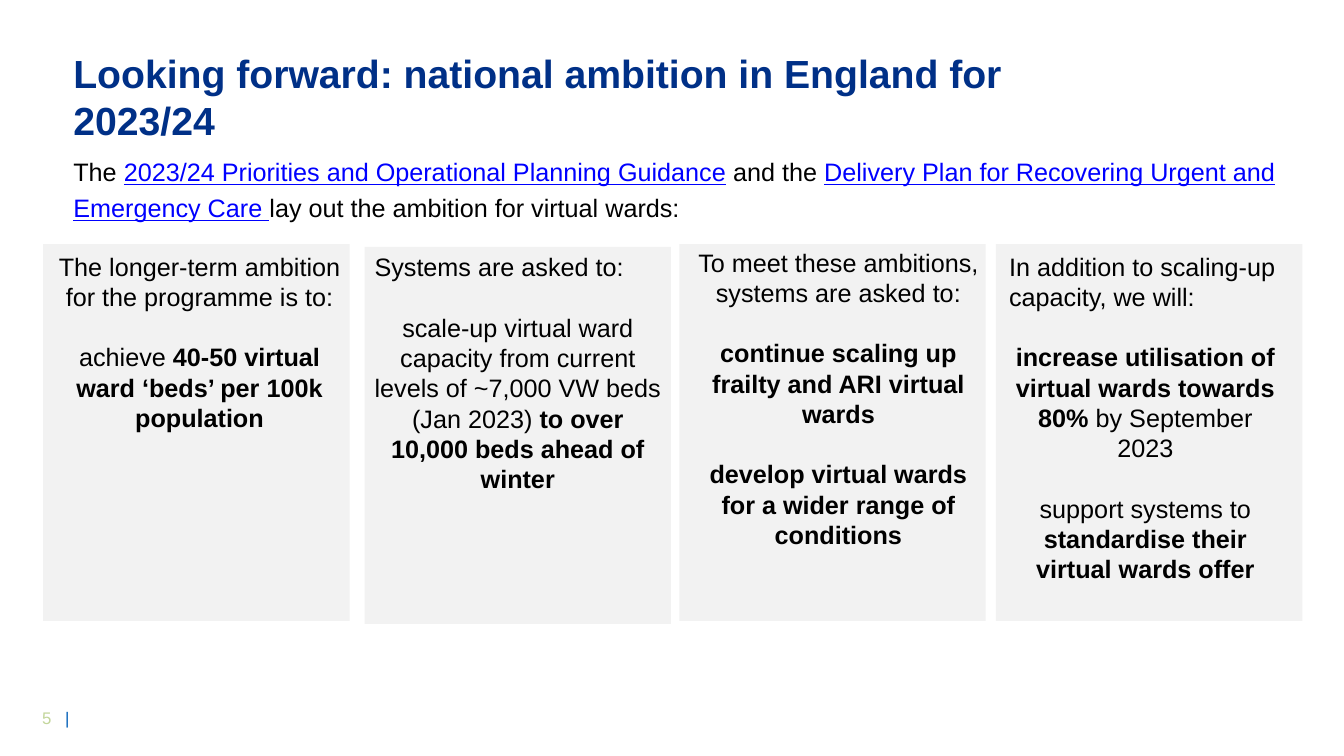
from pptx import Presentation
from pptx.dml.color import RGBColor
from pptx.enum.shapes import MSO_SHAPE as SHAPE
from pptx.enum.text import MSO_ANCHOR as ANCHOR, PP_ALIGN as ALIGN
from pptx.oxml import parse_xml
from pptx.oxml.ns import nsdecls
from pptx.util import Cm, Pt

NAVY = RGBColor(0x00, 0x30, 0x87)
BLUE = RGBColor(0x00, 0x5E, 0xB8)
LINK = RGBColor(0x00, 0x00, 0xFF)
GREEN = RGBColor(0xC3, 0xD6, 0x9B)
GREY = RGBColor(0xF2, 0xF2, 0xF2)
BLACK = RGBColor(0x00, 0x00, 0x00)

FONT = "Arial"
GAP = Pt(21.6)  # one line of body text
CARD_TOP, CARD_W, CARD_H = 6.15, 7.72, 9.5

# Each card: left, drop below the row, text offset (x, y), text width, paragraphs.
# A paragraph is an alignment and its (text, bold) runs.
CARDS = [
    (1.09, 0, (0.08, 0.05), 7.72, [
        (ALIGN.CENTER, [("The longer-term ambition for the programme is to:", False)]),
        (ALIGN.CENTER, [("achieve ", False),
                        ("40-50 virtual ward ‘beds’ per 100k population", True)]),
    ]),
    (9.19, 0.07, (0, 0), 7.72, [
        (ALIGN.LEFT, [("Systems are asked to:", False)]),
        (ALIGN.CENTER, [("scale-up virtual ward capacity from current levels of "
                         "~7,000 VW beds (Jan 2023)", False),
                        (" to over 10,000 beds ahead of winter", True)]),
    ]),
    (17.12, 0, (0.05, -0.05), 7.92, [
        (ALIGN.CENTER, [("To meet these ambitions, systems are asked to:", False)]),
        (ALIGN.CENTER, [("continue scaling up frailty and ARI virtual wards", True)]),
        (ALIGN.CENTER, [("develop virtual wards for a wider range of conditions", True)]),
    ]),
    (25.1, 0, (0.08, 0.05), 7.37, [
        (ALIGN.LEFT, [("In addition to scaling-up capacity, we will:", False)]),
        (ALIGN.CENTER, [("increase utilisation of virtual wards towards 80% ", True),
                        ("by September 2023", False)]),
        (ALIGN.CENTER, [("support systems to ", False),
                        ("standardise their virtual wards offer", True)]),
    ]),
]


def add_text_box(s, left, top, width, height):
    tf = s.shapes.add_textbox(Cm(left), Cm(top), Cm(width), Cm(height)).text_frame
    tf.word_wrap = True
    return tf


def add_run(p, text, size=18, color=BLACK, bold=False, underline=False):
    r = p.add_run()
    r.text = text
    r.font.name = FONT
    r.font.size = Pt(size)
    r.font.color.rgb = color
    r.font.bold = bold
    r.font.underline = underline


def add_title(s, left, top, width, height):
    tf = add_text_box(s, left, top, width, height)
    tf.vertical_anchor = ANCHOR.MIDDLE
    add_run(tf.paragraphs[0], "Looking forward: national ambition in England for 2023/24",
            28, NAVY, bold=True)


def add_intro(s, left, top, width, height):
    p = add_text_box(s, left, top, width, height).paragraphs[0]
    p.line_spacing = 1.2
    add_run(p, "The ")
    add_run(p, "2023/24 Priorities and Operational Planning Guidance",
            color=LINK, underline=True)
    add_run(p, " and the ")
    add_run(p, "Delivery Plan for Recovering Urgent and Emergency Care ",
            color=LINK, underline=True)
    add_run(p, "lay out the ambition for virtual wards:")


def add_card(s, left, top, width, height, offset, text_width, paragraphs):
    # Grey panel
    sp = s.shapes.add_shape(SHAPE.RECTANGLE, Cm(left), Cm(top), Cm(width), Cm(height))
    sp.shadow.inherit = False
    sp.fill.solid()
    sp.fill.fore_color.rgb = GREY
    sp.line.fill.background()
    # Text on the panel
    dx, dy = offset
    tf = add_text_box(s, left + dx, top + dy, text_width, height - dy)
    for i, (align, runs) in enumerate(paragraphs):
        p = tf.add_paragraph() if i else tf.paragraphs[0]
        p.alignment = align
        if i:
            p.space_before = GAP
        for text, bold in runs:
            add_run(p, text, bold=bold)


def add_page_number(s, left, top, width, height):
    p = add_text_box(s, left, top, width, height).paragraphs[0]
    tabs = f'<a:tabLst {nsdecls("a")}><a:tab pos="{Cm(0.58)}" algn="l"/></a:tabLst>'
    p._p.get_or_add_pPr().append(parse_xml(tabs))
    add_run(p, "5\t", 12, GREEN)
    add_run(p, "|", 12, BLUE)


def main():
    prs = Presentation()
    prs.slide_width, prs.slide_height = Cm(33.87), Cm(19.05)
    s = prs.slides.add_slide(prs.slide_layouts[6])
    add_page_number(s, 0.81, 17.7, 1.8, 0.77)
    add_title(s, 1.6, 1.57, 27.36, 1.7)
    add_intro(s, 1.6, 3.66, 31.52, 2)
    for left, drop, offset, text_width, paragraphs in CARDS:
        add_card(s, left, CARD_TOP + drop, CARD_W, CARD_H, offset, text_width, paragraphs)
    prs.save("out.pptx")


if __name__ == "__main__":
    main()
